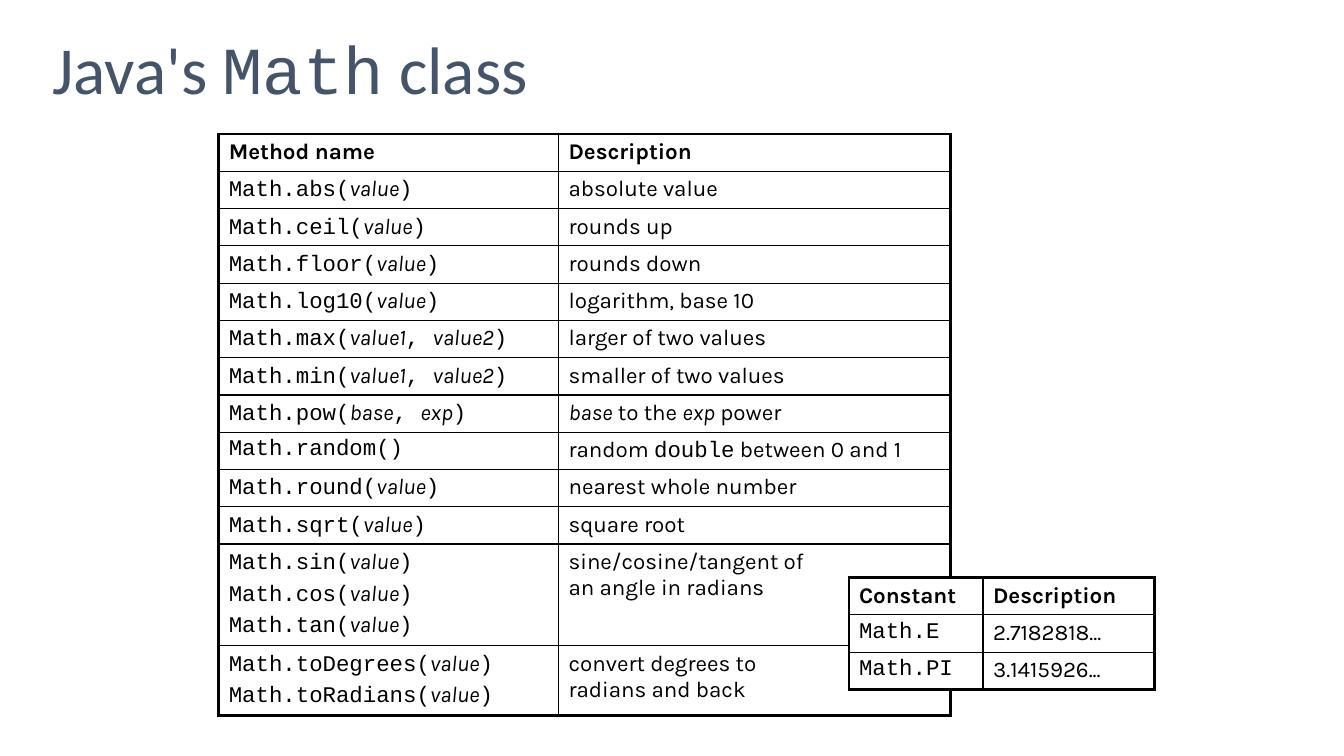
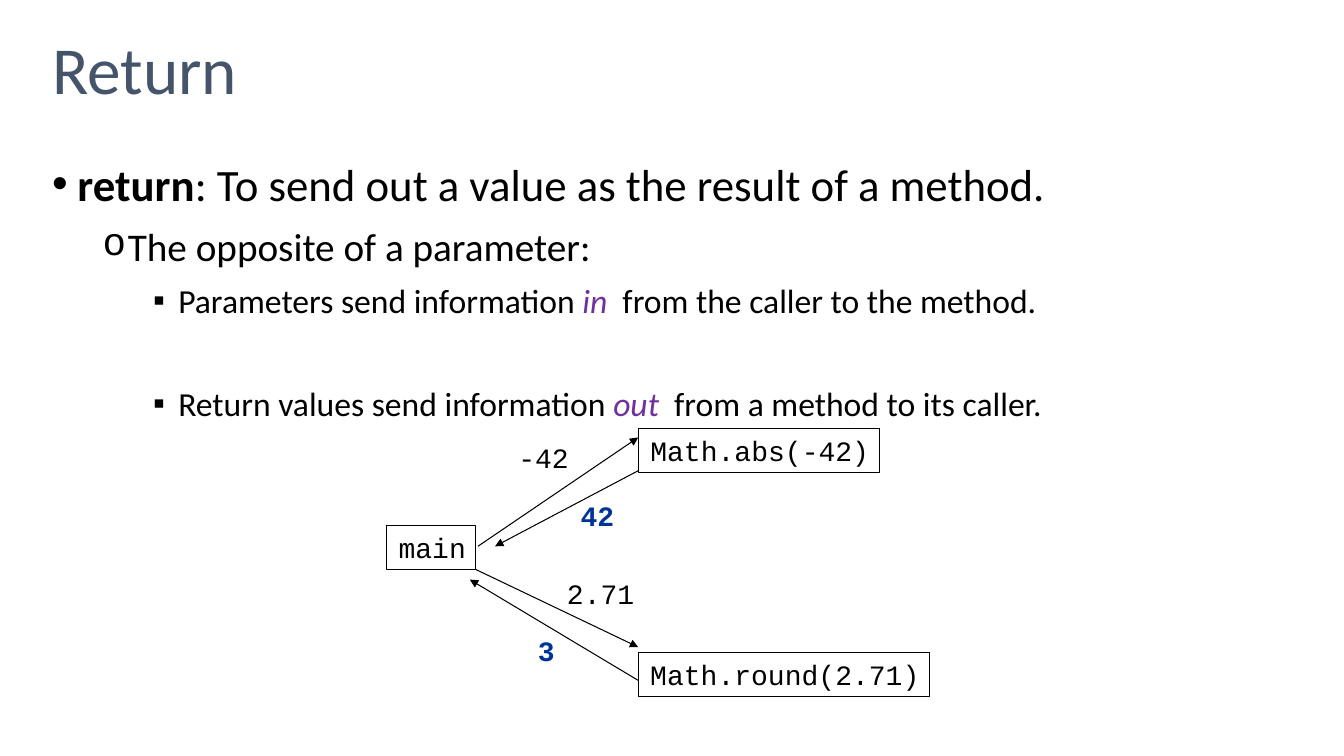
from lxml import etree
from pptx import Presentation
from pptx.dml.color import RGBColor
from pptx.enum.shapes import MSO_CONNECTOR, MSO_SHAPE
from pptx.enum.text import MSO_ANCHOR, PP_ALIGN
from pptx.oxml.ns import qn
from pptx.util import Pt

PX = 9144  # 100 px to the inch
BLACK = RGBColor(0x00, 0x00, 0x00)
WHITE = RGBColor(0xFF, 0xFF, 0xFF)
SLATE = RGBColor(0x44, 0x54, 0x6A)
PURPLE = RGBColor(0x70, 0x30, 0xA0)
BLUE = RGBColor(0x00, 0x33, 0x99)
SANS, CODE, TABLE_FONT = "Calibri", "Courier New", "Karla"
RECTANGLE = MSO_SHAPE.RECTANGLE
STRAIGHT = MSO_CONNECTOR.STRAIGHT
MIDDLE, TOP = MSO_ANCHOR.MIDDLE, MSO_ANCHOR.TOP
RIGHT = PP_ALIGN.RIGHT
THICK, THIN, HAIRLINE = Pt(2.25), Pt(1), Pt(0.75)


def add_run(paragraph, text, font, size, color=BLACK, bold=False, italic=False):
    """Add text in one style; a newline becomes a line break of the same size."""
    for index, line in enumerate(text.split("\n")):
        if index:
            paragraph.add_line_break()
            line_break = paragraph._p.findall(qn("a:br"))[-1]
            properties = etree.SubElement(line_break, qn("a:rPr"), sz=str(size * 100))
            etree.SubElement(properties, qn("a:latin"), typeface=font)
        run = paragraph.add_run()
        run.text = line
        run.font.name = font
        run.font.size = Pt(size)
        run.font.color.rgb = color
        run.font.bold = bold
        run.font.italic = italic


def add_cell_borders(cell, widths):
    """Draw black borders; widths are in the order left, right, top, bottom."""
    properties = cell._tc.get_or_add_tcPr()
    for side, width in zip(("lnL", "lnR", "lnT", "lnB"), widths):
        line = etree.SubElement(properties, qn(f"a:{side}"), w=str(width))
        fill = etree.SubElement(line, qn("a:solidFill"))
        etree.SubElement(fill, qn("a:srgbClr"), val=str(BLACK))


presentation = Presentation()
presentation.slide_width = 1333 * PX
presentation.slide_height = 750 * PX

# Slides and titles
titles = [
    [("Java's ", SANS), ("Math", CODE), (" class", SANS)],
    [("Return", SANS)],
]
slides = []
for title_runs in titles:
    slide = presentation.slides.add_slide(presentation.slide_layouts[6])
    title = slide.shapes.add_textbox(42 * PX, 0, 1250 * PX, 145 * PX)
    title.text_frame.word_wrap = True
    title.text_frame.vertical_anchor = MIDDLE
    paragraph = title.text_frame.paragraphs[0]
    paragraph.line_spacing = 0.9
    for text, font in title_runs:
        add_run(paragraph, text, font, 48, SLATE)
    slides.append(slide)
math_slide, return_slide = slides

# Math class: each cell is a list of paragraphs, each paragraph a list of styled runs
STYLES = {
    "plain": {"font": TABLE_FONT},
    "bold": {"font": TABLE_FONT, "bold": True},
    "italic": {"font": TABLE_FONT, "italic": True},
    "code": {"font": CODE},
}
methods = [
    (["abs"], ["value"], [("absolute value", "plain")]),
    (["ceil"], ["value"], [("rounds up", "plain")]),
    (["floor"], ["value"], [("rounds down", "plain")]),
    (["log10"], ["value"], [("logarithm, base 10", "plain")]),
    (["max"], ["value1", "value2"], [("larger of two values", "plain")]),
    (["min"], ["value1", "value2"], [("smaller of two values", "plain")]),
    (["pow"], ["base", "exp"], [("base", "italic"), (" to the ", "plain"),
                                ("exp", "italic"), (" power", "plain")]),
    (["random"], [], [("random ", "plain"), ("double", "code"),
                      (" between 0 and 1", "plain")]),
    (["round"], ["value"], [("nearest whole number", "plain")]),
    (["sqrt"], ["value"], [("square root", "plain")]),
    (["sin", "cos", "tan"], ["value"],
     [("sine/cosine/tangent of\nan angle in radians", "plain")]),
    (["toDegrees", "toRadians"], ["value"],
     [("convert degrees to\nradians and back", "plain")]),
]
constants = [("Math.E", "2.7182818..."), ("Math.PI", "3.1415926...")]

method_rows = [([[("Method name", "bold")]], [[("Description", "bold")]])]
for names, arguments, description in methods:
    calls = []
    for name in names:
        if arguments:
            call = [(f"Math.{name}(", "code")]
            for index, argument in enumerate(arguments):
                if index:
                    call.append((", ", "code"))
                call.append((argument, "italic"))
            call.append((")", "code"))
        else:
            call = [(f"Math.{name}()", "code")]
        calls.append(call)
    method_rows.append((calls, [description]))

constant_rows = [([[("Constant", "bold")]], [[("Description", "bold")]])]
for name, value in constants:
    constant_rows.append(([[(name, "code")]], [[(value, "plain")]]))

ROW_HEIGHT = 37
tables = [
    (217, 133, [337, 389], [ROW_HEIGHT] * 11 + [101, 69], method_rows),
    (842, 573, [133, 170], [ROW_HEIGHT] * 3, constant_rows),
]
for left, top, column_widths, row_heights, rows in tables:
    table = math_slide.shapes.add_table(
        len(rows), len(column_widths), left * PX, top * PX,
        sum(column_widths) * PX, sum(row_heights) * PX).table
    table.first_row = False
    table.horz_banding = False
    for column, width in zip(table.columns, column_widths):
        column.width = width * PX
    for row_index, (height, row) in enumerate(zip(row_heights, rows)):
        table.rows[row_index].height = height * PX
        for column_index, cell_paragraphs in enumerate(row):
            cell = table.cell(row_index, column_index)
            on_edge = (column_index == 0, column_index == len(row) - 1,
                       row_index == 0, row_index == len(rows) - 1)
            add_cell_borders(cell, [THICK if edge else THIN for edge in on_edge])
            cell.fill.solid()
            cell.fill.fore_color.rgb = WHITE
            for index, runs in enumerate(cell_paragraphs):
                frame = cell.text_frame
                paragraph = frame.add_paragraph() if index else frame.paragraphs[0]
                space = etree.SubElement(paragraph._p.get_or_add_pPr(), qn("a:spcBef"))
                etree.SubElement(space, qn("a:spcPct"), val="20000")
                for text, style in runs:
                    add_run(paragraph, text, size=16, **STYLES[style])

# Return: bullets as level, space before, runs
LEVELS = [("•", "Arial", 32), ("o", "Courier New", 28), ("▪", "Arial", 24)]
EMPHASIS = {"color": PURPLE, "italic": True}
bullets = [
    (0, 10, [("return", {"bold": True}),
             (": To send out a value as the result of a method.", {})]),
    (1, 5, [("The opposite of a parameter:", {})]),
    (2, 5, [("Parameters send information ", {}), ("in  ", EMPHASIS),
            ("from the caller to the method.", {})]),
    (2, 42, [("Return values send information ", {}), ("out  ", EMPHASIS),
             ("from a method to its caller.", {})]),
]
body = return_slide.shapes.add_textbox(42 * PX, 145 * PX, 1250 * PX, 566 * PX)
body.text_frame.word_wrap = True
for index, (level, space_before, runs) in enumerate(bullets):
    frame = body.text_frame
    paragraph = frame.add_paragraph() if index else frame.paragraphs[0]
    symbol, symbol_font, size = LEVELS[level]
    paragraph.level = level
    paragraph.line_spacing = 1.1
    paragraph.space_before = Pt(space_before)
    properties = paragraph._p.get_or_add_pPr()
    properties.set("marL", str((25 + 50 * level) * PX))
    properties.set("indent", str(-25 * PX))
    etree.SubElement(properties, qn("a:buFont"), typeface=symbol_font)
    etree.SubElement(properties, qn("a:buChar"), char=symbol)
    for text, style in runs:
        add_run(paragraph, text, SANS, size, **style)

# Call diagram: boxes, then values passed in (black) and returned (blue)
boxes = [
    ("main", 383, 521, 89),
    ("Math.abs(-42)", 633, 425, 239),
    ("Math.round(2.71)", 633, 647, 289),
]
values = [
    ("-42", 503, 432, 71, False),
    ("2.71", 551, 567, 88, False),
    ("42", 564, 490, 55, True),
    ("3", 522, 624, 38, True),
]
diagram_texts = []
for text, left, top, width in boxes:
    shape = return_slide.shapes.add_shape(
        RECTANGLE, left * PX, top * PX, width * PX, 44 * PX)
    shape.shadow.inherit = False
    shape.fill.background()
    shape.line.color.rgb = BLACK
    shape.line.width = HAIRLINE
    diagram_texts.append((shape, text, BLACK, False))
for text, left, top, width, returned in values:
    shape = return_slide.shapes.add_textbox(
        left * PX, top * PX, width * PX, 43 * PX)
    diagram_texts.append((shape, text, BLUE if returned else BLACK, returned))
for shape, text, color, bold in diagram_texts:
    shape.text_frame.word_wrap = False
    shape.text_frame.vertical_anchor = TOP
    paragraph = shape.text_frame.paragraphs[0]
    paragraph.alignment = RIGHT
    paragraph.space_before = Pt(5)
    add_run(paragraph, text, CODE, 20, color, bold)

arrows = [
    (474, 542, 633, 434),
    (633, 467, 491, 542),
    (472, 565, 633, 642),
    (633, 675, 466, 575),
]
for ends in arrows:
    arrow = return_slide.shapes.add_connector(STRAIGHT, *[end * PX for end in ends])
    arrow.line.color.rgb = BLACK
    arrow.line.width = HAIRLINE
    etree.SubElement(arrow.line._get_or_add_ln(), qn("a:tailEnd"), type="triangle")
    etree.SubElement(arrow._element.spPr, qn("a:effectLst"))

presentation.save("out.pptx")
